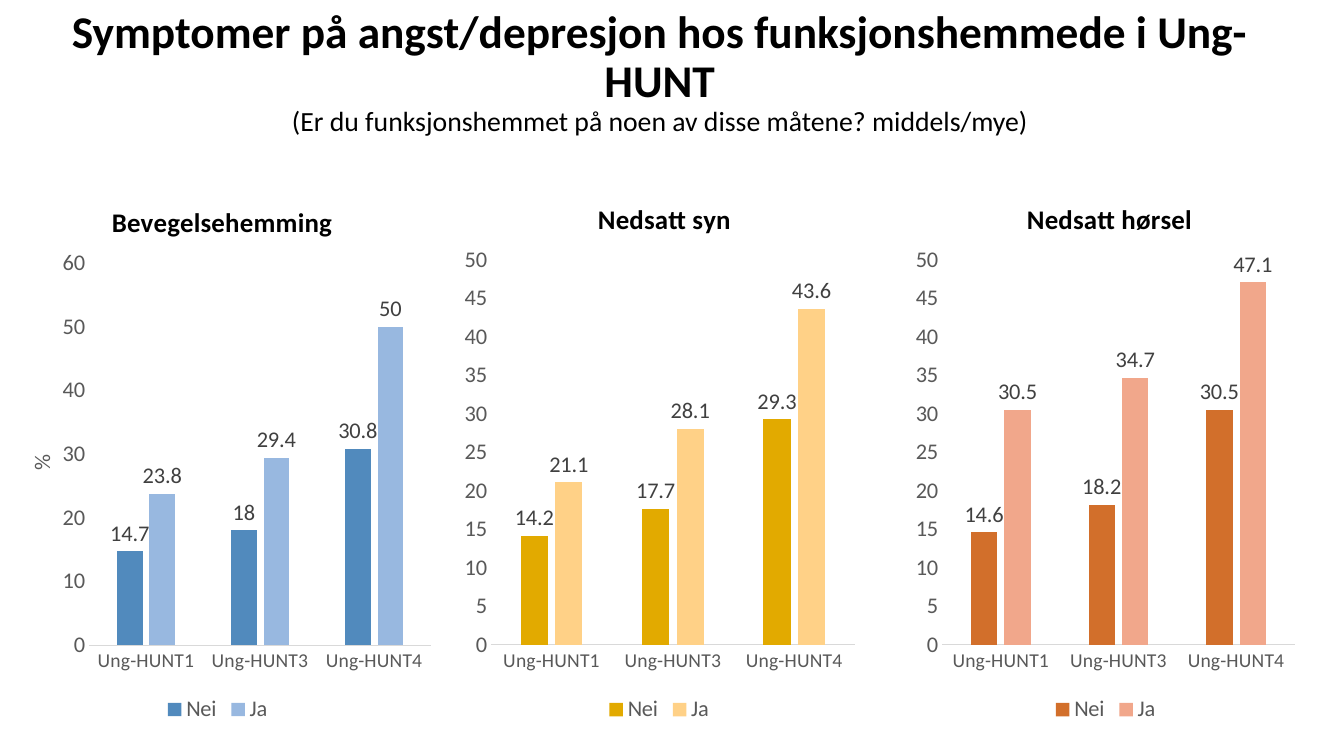
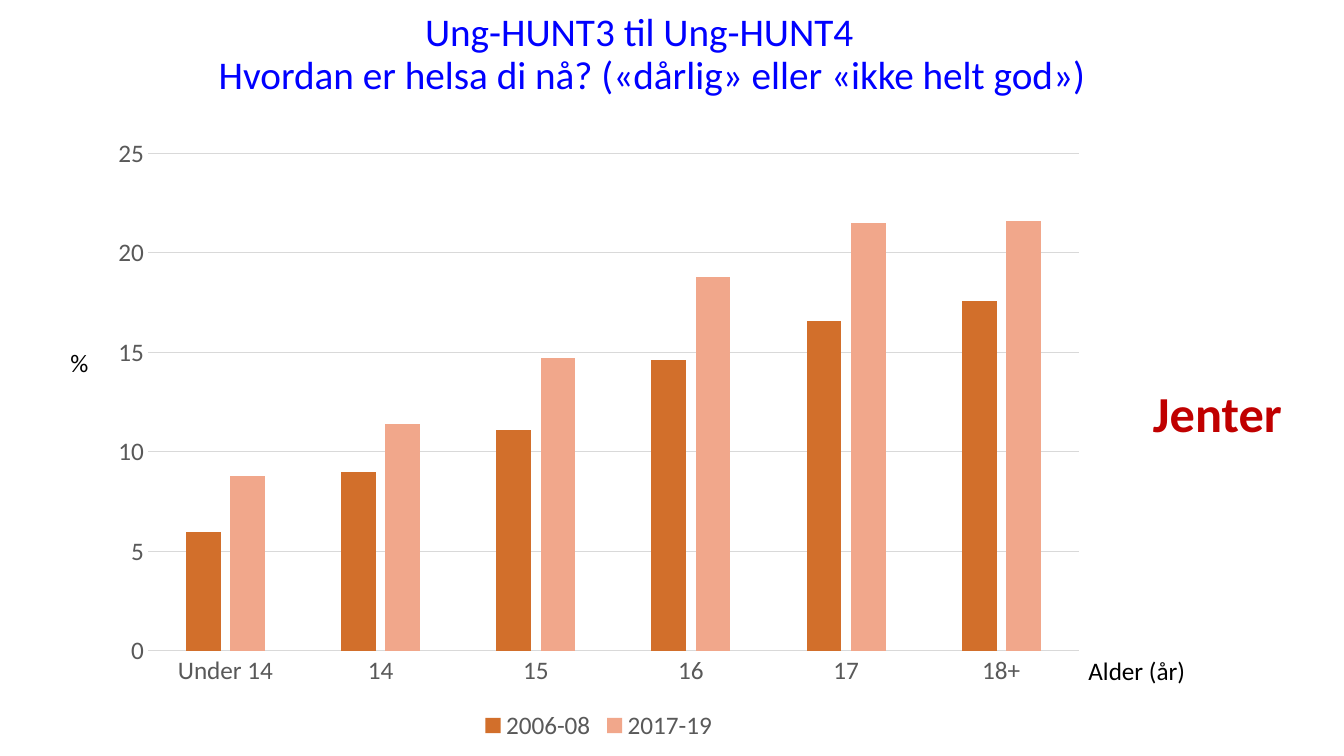
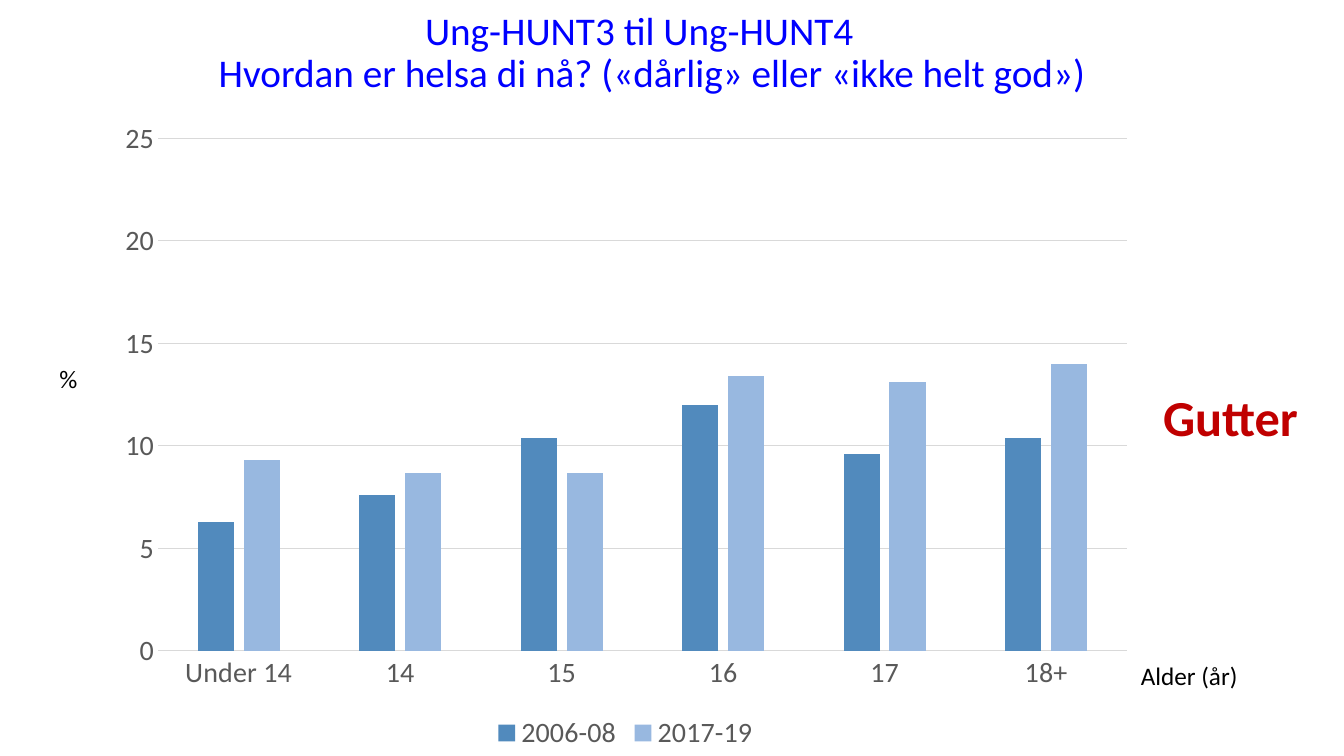
from pptx import Presentation
from pptx.chart.data import CategoryChartData
from pptx.dml.color import RGBColor
from pptx.enum.chart import XL_CHART_TYPE as CT, XL_LABEL_POSITION as LP
from pptx.enum.chart import XL_LEGEND_POSITION as LEG, XL_TICK_MARK as TICK
from pptx.enum.text import MSO_ANCHOR as ANCHOR, MSO_AUTO_SIZE as AUTO, PP_ALIGN as AL
from pptx.oxml import parse_xml
from pptx.oxml.ns import nsdecls, qn
from pptx.util import Pt

FONT = "Calibri"
BLACK = RGBColor(0x00, 0x00, 0x00)
TITLE_BLUE = RGBColor(0x00, 0x00, 0xFF)
RED = RGBColor(0xC0, 0x00, 0x00)
GREY = RGBColor(0x59, 0x59, 0x59)
LABEL_GREY = RGBColor(0x40, 0x40, 0x40)
LINE_GREY = RGBColor(0xD9, 0xD9, 0xD9)
BLUES = (RGBColor(0x51, 0x8A, 0xBD), RGBColor(0x98, 0xB8, 0xE0))
YELLOWS = (RGBColor(0xE2, 0xAA, 0x00), RGBColor(0xFF, 0xD1, 0x87))
ORANGES = (RGBColor(0xD2, 0x6F, 0x2B), RGBColor(0xF1, 0xA7, 0x8B))

SURVEYS = ("Ung-HUNT1", "Ung-HUNT3", "Ung-HUNT4")
AGES = ("Under 14", "14", "15", "16", "17", "18+")
HEALTH_TITLE = "Ung-HUNT3 til Ung-HUNT4\t\vHvordan er helsa di nå? («dårlig» eller «ikke helt god»)"


def set_font(font, size, color, bold=False):
    font.name = FONT
    font.size = Pt(size)
    font.bold = bold
    font.color.rgb = color


def add_title(s, box, lines):
    tf = s.shapes.add_textbox(*map(Pt, box)).text_frame
    tf.word_wrap = True
    tf.vertical_anchor = ANCHOR.MIDDLE
    for i, (text, size, color, bold) in enumerate(lines):
        p = tf.add_paragraph() if i else tf.paragraphs[0]
        p.text = text
        p.alignment = AL.CENTER
        p.line_spacing = 0.9
        for r in p.runs:
            set_font(r.font, size, color, bold)


def add_label(s, box, text, size=18, color=BLACK, bold=False):
    tf = s.shapes.add_textbox(*map(Pt, box)).text_frame
    tf.word_wrap = False
    tf.auto_size = AUTO.SHAPE_TO_FIT_TEXT
    tf.text = text
    set_font(tf.paragraphs[0].runs[0].font, size, color, bold)


def set_layout(element, chart_box, area):
    left, top, width, height = chart_box
    values = [("x", (area[0] - left) / width), ("y", (area[1] - top) / height)]
    target = ""
    if len(area) == 4:
        target = '<c:layoutTarget val="inner"/>'
        values += [("w", area[2] / width), ("h", area[3] / height)]
    modes = '<c:xMode val="edge"/><c:yMode val="edge"/>'
    sizes = "".join(f'<c:{key} val="{value:.4f}"/>' for key, value in values)
    layout = parse_xml(f'<c:layout {nsdecls("c")}><c:manualLayout>{target}{modes}{sizes}'
                       '</c:manualLayout></c:layout>')
    for old in element.findall(qn("c:layout")):
        element.remove(old)
    tx = element.find(qn("c:tx"))
    element.insert(0 if tx is None else 1, layout)


def style_axis(axis, size):
    axis.major_tick_mark = axis.minor_tick_mark = TICK.NONE
    set_font(axis.tick_labels.font, size, GREY)


def grey_line(line):
    line.color.rgb = LINE_GREY
    line.width = Pt(0.75)


def add_columns(s, box, plot_box, cats, series, colors, size, cat_size, top, step, grid):
    data = CategoryChartData()
    data.categories = cats
    for name, values in series:
        data.add_series(name, values)
    chart = s.shapes.add_chart(CT.COLUMN_CLUSTERED, *map(Pt, box), data).chart
    set_font(chart.font, size, BLACK)
    chart.has_title = False
    chart.has_legend = True
    chart.legend.position = LEG.BOTTOM
    chart.legend.include_in_layout = False
    set_font(chart.legend.font, size, GREY)

    style_axis(chart.category_axis, cat_size)
    grey_line(chart.category_axis.format.line)
    axis = chart.value_axis
    style_axis(axis, size)
    axis.minimum_scale, axis.maximum_scale, axis.major_unit = 0, top, step
    axis.format.line.fill.background()
    axis.has_major_gridlines = grid
    if grid:
        grey_line(axis.major_gridlines.format.line)

    plot = chart.plots[0]
    plot.vary_by_categories = False
    plot.gap_width = 219
    plot.overlap = -27
    for ser, color in zip(plot.series, colors):
        ser.format.fill.solid()
        ser.format.fill.fore_color.rgb = color
    set_layout(chart.element.find(".//" + qn("c:plotArea")), box, plot_box)
    return chart


def add_survey_chart(s, box, plot_box, title, title_at, nei, ja, colors, top, step):
    series = (("Nei", nei), ("Ja", ja))
    chart = add_columns(s, box, plot_box, SURVEYS, series, colors, 16, 14, top, step, False)
    chart.has_title = True
    tf = chart.chart_title.text_frame
    tf.text = title
    set_font(tf.paragraphs[0].runs[0].font, 19.2, BLACK, True)
    set_layout(chart.chart_title.element, box, title_at)
    for ser in chart.plots[0].series:
        labels = ser.data_labels
        labels.show_value = True
        labels.position = LP.OUTSIDE_END
        set_font(labels.font, 16, LABEL_GREY)
    return chart


def add_percent_title(chart, box, at):
    title = chart.value_axis.axis_title
    title.text_frame.text = "%"
    set_font(title.text_frame.paragraphs[0].runs[0].font, 16, GREY)
    body = title.element.find(".//" + qn("a:bodyPr"))
    body.set("rot", "-5400000")
    body.set("vert", "horz")
    set_layout(title.element, box, at)


def symptoms_slide(s):
    add_title(s, (11.5, 0, 919.5, 104.4), [
        ("Symptomer på angst/depresjon hos funksjonshemmede i Ung-HUNT", 32.4, BLACK, True),
        ("(Er du funksjonshemmet på noen av disse måtene? middels/mye)", 19.8, BLACK, False)])
    box = (-3.6, 123.1, 318.2, 396.7)
    chart = add_survey_chart(s, box, (63.6, 188, 244.4, 272.8), "Bevegelsehemming",
                             (76.4, 141.4), (14.7, 18, 30.8), (23.8, 29.4, 50),
                             BLUES, 60, 10)
    add_percent_title(chart, box, (16, 322))
    add_survey_chart(s, (325.4, 121, 290.9, 398.9), (350.7, 185.7, 260, 275), "Nedsatt syn",
                     (423.6, 139.3), (14.2, 17.7, 29.3), (21.1, 28.1, 43.6),
                     YELLOWS, 50, 5)
    add_survey_chart(s, (648.7, 121, 282.2, 398.9), (672.9, 185.7, 252.1, 275),
                     "Nedsatt hørsel", (730, 139.3), (14.6, 18.2, 30.5),
                     (30.5, 34.7, 47.1), ORANGES, 50, 5)


def health_slide(s, title_top, box, plot_box, before, after, colors, size,
                 group, group_box, percent_at, age_at):
    add_title(s, (57, title_top, 817.2, 67), [(HEALTH_TITLE, 28, TITLE_BLUE, False)])
    series = (("2006-08", before), ("2017-19", after))
    add_columns(s, box, plot_box, AGES, series, colors, size, size, 25, 5, True)
    add_label(s, group_box, group, 36, RED, True)
    add_label(s, (*percent_at, 27.4, 29), "%")
    add_label(s, (*age_at, 84.2, 29), "Alder (år)")


def main():
    prs = Presentation()
    prs.slide_width, prs.slide_height = Pt(960), Pt(540)
    symptoms, girls, boys = (prs.slides.add_slide(prs.slide_layouts[6]) for _ in range(3))
    symptoms_slide(symptoms)
    health_slide(girls, 6, (70.6, 90, 714.2, 442.8), (105.7, 109.6, 665, 355.4),
                 (6, 9, 11.1, 14.6, 16.6, 17.6), (8.8, 11.4, 14.7, 18.8, 21.5, 21.6),
                 ORANGES, 18, "Jenter", (816.5, 269.3, 107.3, 51),
                 (43.2, 244.8), (770.4, 464.4))
    health_slide(boys, 5, (74.2, 77, 745.2, 463), (112.9, 98.9, 692.1, 366.1),
                 (6.3, 7.6, 10.4, 12, 9.6, 10.4), (9.3, 8.7, 8.7, 13.4, 13.1, 14),
                 BLUES, 20, "Gutter", (823.7, 272.2, 113, 51),
                 (35.3, 256.3), (807.8, 468))
    prs.save("out.pptx")


if __name__ == "__main__":
    main()
